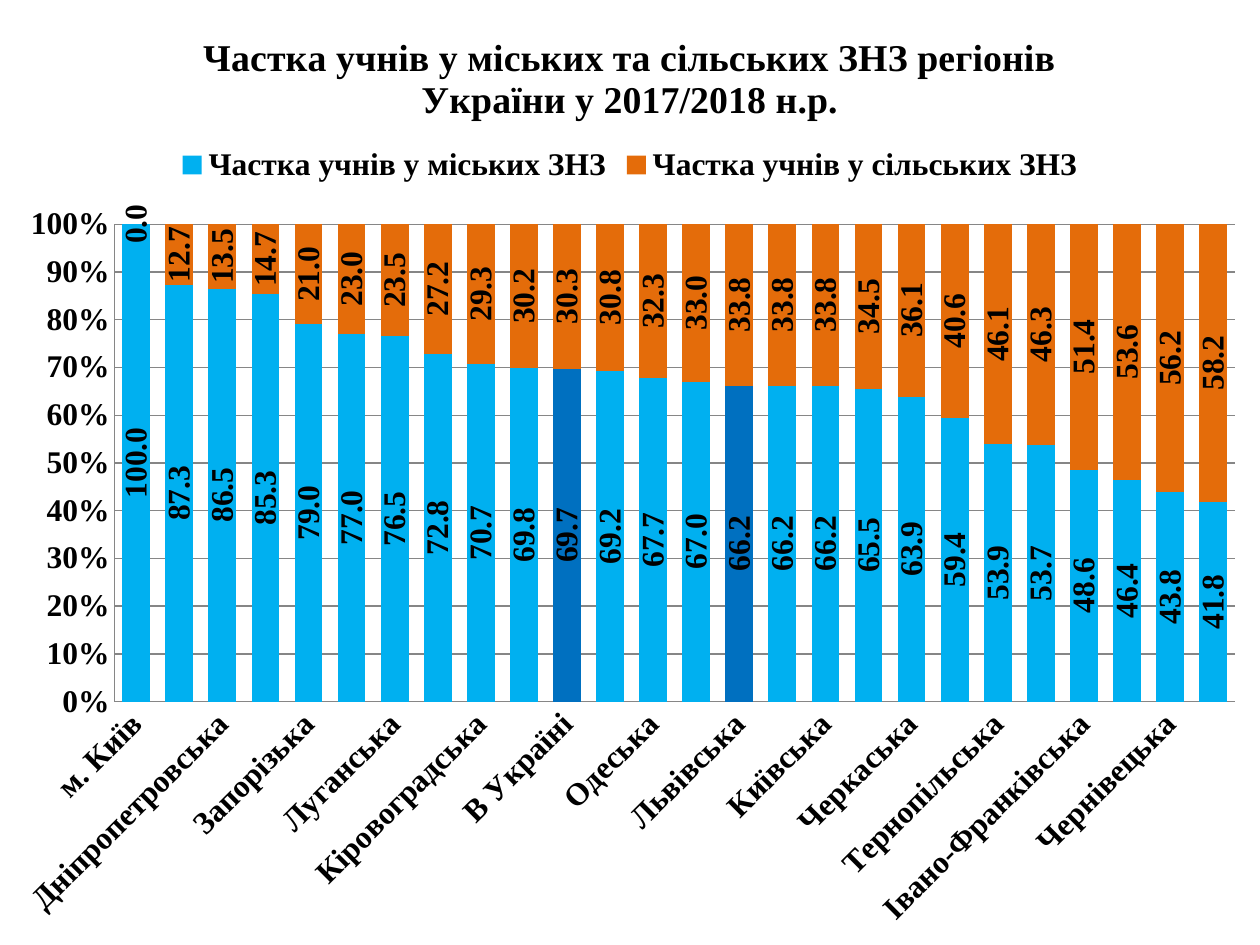
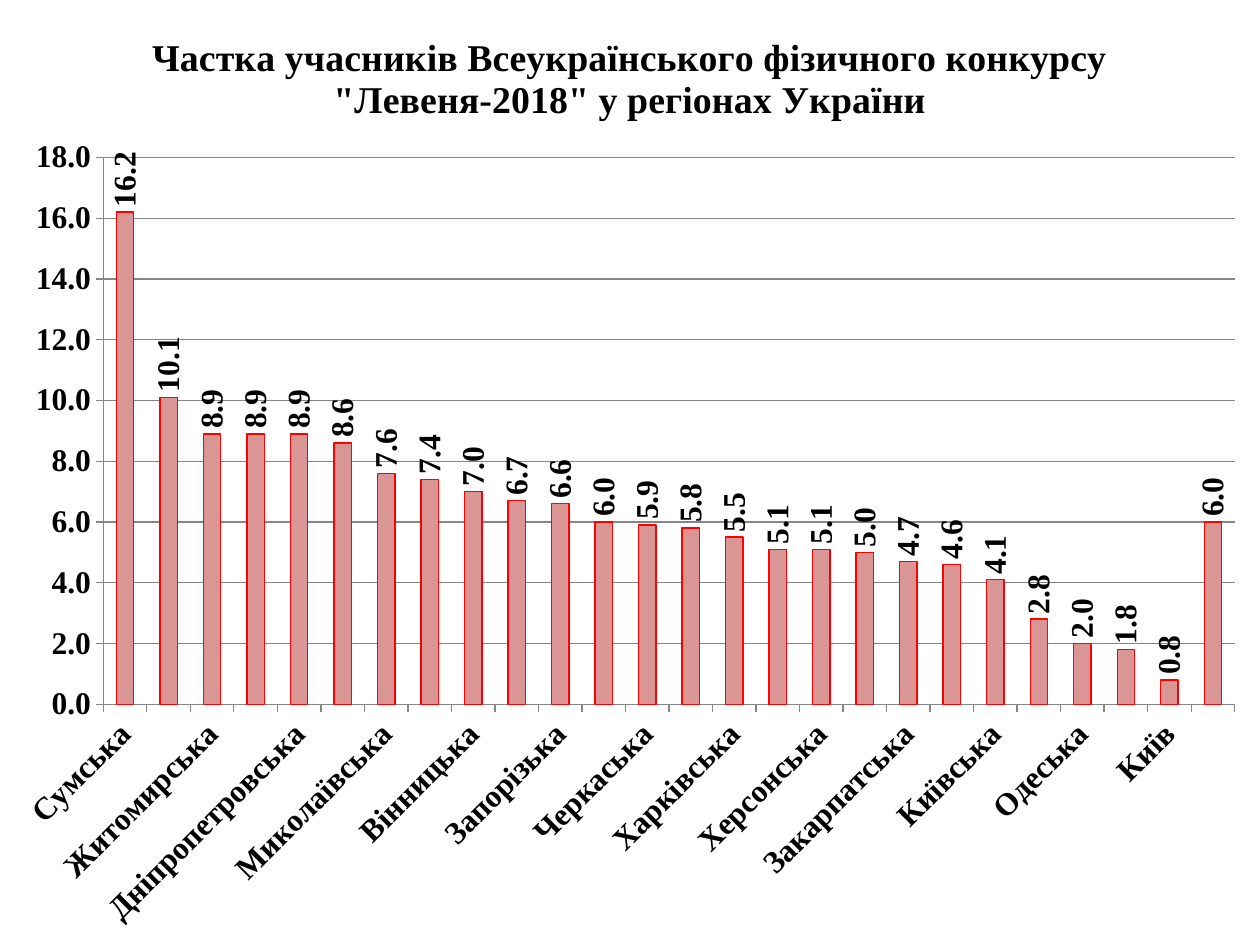
from lxml.etree import SubElement
from pptx import Presentation
from pptx.chart.data import CategoryChartData
from pptx.dml.color import RGBColor
from pptx.enum.chart import (
    XL_CHART_TYPE as ChartType,
    XL_LABEL_POSITION as LabelPosition,
    XL_LEGEND_POSITION as LegendPosition,
    XL_TICK_MARK as TickMark,
)
from pptx.oxml import parse_xml
from pptx.oxml.ns import nsdecls, qn
from pptx.util import Inches, Pt

COLORS = {
    "text": "000000",
    "axis": "868686",
    "urban": "00B0F0",
    "urban_highlight": "0070C0",
    "rural": "E46C0A",
    "participants": "D99694",
    "participants_edge": "FF0000",
}
FONT = "Times New Roman"
BODY_SIZE = 18
TITLE_SIZE = 21.6
WIDTH, HEIGHT = 10, 7.5

URBAN_SHARES = {
    "м. Київ": 100, "Донецька": 87.3, "Дніпропетровська": 86.5,
    "Харківська": 85.3, "Запорізька": 79, "Сумська": 77,
    "Луганська": 76.5, "Чернігівська": 72.8, "Кіровоградська": 70.7,
    "Миколаївська": 69.8, "В Україні": 69.7, "Полтавська": 69.2,
    "Одеська": 67.7, "Хмельницька": 67, "Львівська": 66.2,
    "Житомирська": 66.2, "Київська": 66.2, "Херсонська": 65.5,
    "Черкаська": 63.9, "Вінницька": 59.4, "Тернопільська": 53.9,
    "Волинська": 53.7, "Івано-Франківська": 48.6, "Рівненська": 46.4,
    "Чернівецька": 43.8, "Закарпатська": 41.8,
}
HIGHLIGHTED = ("В Україні", "Львівська")

PARTICIPANT_SHARES = {
    "Сумська": 16.2, "Полтавська": 10.1, "Житомирська": 8.9,
    "Львівська": 8.9, "Дніпропетровська": 8.9, "Рівненська": 8.6,
    "Миколаївська": 7.6, "Кіровоградська": 7.4, "Вінницька": 7,
    "Чернівецька": 6.7, "Запорізька": 6.6, "Тернопільська": 6,
    "Черкаська": 5.9, "Донецька": 5.8, "Харківська": 5.5,
    "Волинська": 5.1, "Херсонська": 5.1, "Луганська": 5,
    "Закарпатська": 4.7, "Хмельницька": 4.6, "Київська": 4.1,
    "Івано-Франківська": 2.8, "Одеська": 2, "Чернігівська": 1.8,
    "Київ": 0.8, "Україна": 6,
}


def rgb(name):
    return RGBColor.from_string(COLORS[name])


def format_font(font, size=BODY_SIZE, color="text", bold=True):
    font.name = FONT
    font.size = Pt(size)
    font.bold = bold
    font.color.rgb = rgb(color)


def write_text(frame, text, **style):
    paragraph = frame.paragraphs[0]
    run = paragraph.add_run()
    run.text = text
    format_font(run.font, **style)


def paint(target, color):
    target.format.fill.solid()
    target.format.fill.fore_color.rgb = rgb(color)


def draw_line(line, color, width=0.75):
    line.color.rgb = rgb(color)
    line.width = Pt(width)


def rotate_text(element, degrees):
    body = element.find(qn("c:txPr")).find(qn("a:bodyPr"))
    body.set("rot", str(degrees * 60000))
    body.set("vert", "horz")


def place_plot(chart, left, top, width, height):
    plot_area = chart._chartSpace.chart.plotArea
    for old in plot_area.findall(qn("c:layout")):
        plot_area.remove(old)
    layout = parse_xml(f"<c:layout {nsdecls('c')}/>")
    manual = SubElement(layout, qn("c:manualLayout"))
    settings = {
        "layoutTarget": "inner", "xMode": "edge", "yMode": "edge",
        "x": left / WIDTH, "y": top / HEIGHT,
        "w": width / WIDTH, "h": height / HEIGHT,
    }
    for tag, value in settings.items():
        SubElement(manual, qn(f"c:{tag}")).set("val", str(value))
    plot_area.insert(0, layout)


def format_axes(chart, tick, number_format, maximum, step):
    regions, shares = chart.category_axis, chart.value_axis
    for axis in (regions, shares):
        axis.major_tick_mark = tick
        axis.minor_tick_mark = TickMark.NONE
        format_font(axis.tick_labels.font)
        draw_line(axis.format.line, "axis")
    rotate_text(regions._element, -45)
    skip = parse_xml(f'<c:tickLblSkip {nsdecls("c")} val="2"/>')
    regions._element.find(qn("c:noMultiLvlLbl")).addprevious(skip)
    shares.minimum_scale, shares.maximum_scale = 0, maximum
    shares.major_unit = step
    shares.has_major_gridlines = True
    draw_line(shares.major_gridlines.format.line, "axis")
    shares.tick_labels.number_format = number_format
    shares.tick_labels.number_format_is_linked = False


def format_series(series, color, position):
    paint(series, color)
    series.invert_if_negative = False
    labels = series.data_labels
    labels.show_value = True
    labels.number_format = "0.0"
    labels.number_format_is_linked = False
    labels.position = position
    format_font(labels.font)
    rotate_text(labels._element, -90)


def add_column_chart(slide, kind, title, regions, shares, colors, position, gap):
    data = CategoryChartData(number_format="0.0")
    data.categories = regions
    for name, values in shares.items():
        data.add_series(name, values)
    frame = slide.shapes.add_chart(
        kind, Inches(0), Inches(0), Inches(WIDTH), Inches(HEIGHT), data)
    chart = frame.chart
    format_font(chart.font)
    chart.has_title = True
    write_text(chart.chart_title.text_frame, title, size=TITLE_SIZE)
    chart.has_legend = False
    plot = chart.plots[0]
    plot.vary_by_categories = False
    plot.gap_width = gap
    for series, color in zip(plot.series, colors):
        format_series(series, color, position)
    return chart


def add_top_legend(chart):
    chart.has_legend = True
    chart.legend.position = LegendPosition.TOP
    chart.legend.include_in_layout = False
    format_font(chart.legend.font)


def build_school_slide(slide):
    regions = list(URBAN_SHARES)
    urban = list(URBAN_SHARES.values())
    rural = [round(100 - share, 1) for share in urban]
    chart = add_column_chart(
        slide, ChartType.COLUMN_STACKED_100,
        "Частка учнів у міських та сільських ЗНЗ регіонів України у 2017/2018 н.р.",
        regions,
        {"Частка учнів у міських ЗНЗ": urban, "Частка учнів у сільських ЗНЗ": rural},
        ("urban", "rural"), LabelPosition.CENTER, gap=55)
    chart.plots[0].overlap = 100
    for region in HIGHLIGHTED:
        paint(chart.plots[0].series[0].points[regions.index(region)], "urban_highlight")
    format_axes(chart, TickMark.NONE, "0%", maximum=1, step=0.1)
    add_top_legend(chart)
    place_plot(chart, 0.91, 1.78, 8.89, 3.79)


def build_contest_slide(slide):
    chart = add_column_chart(
        slide, ChartType.COLUMN_CLUSTERED,
        'Частка учасників Всеукраїнського фізичного конкурсу "Левеня-2018" у регіонах України',
        list(PARTICIPANT_SHARES),
        {"Частка учасників": PARTICIPANT_SHARES.values()},
        ("participants",), LabelPosition.OUTSIDE_END, gap=150)
    draw_line(chart.plots[0].series[0].format.line, "participants_edge")
    format_axes(chart, TickMark.OUTSIDE, "0.0", maximum=18, step=2)
    place_plot(chart, 0.82, 1.25, 8.98, 4.34)


def main():
    deck = Presentation()
    deck.slide_width, deck.slide_height = Inches(WIDTH), Inches(HEIGHT)
    blank = deck.slide_layouts[6]
    for build in (build_school_slide, build_contest_slide):
        build(deck.slides.add_slide(blank))
    deck.save("out.pptx")


if __name__ == "__main__":
    main()
